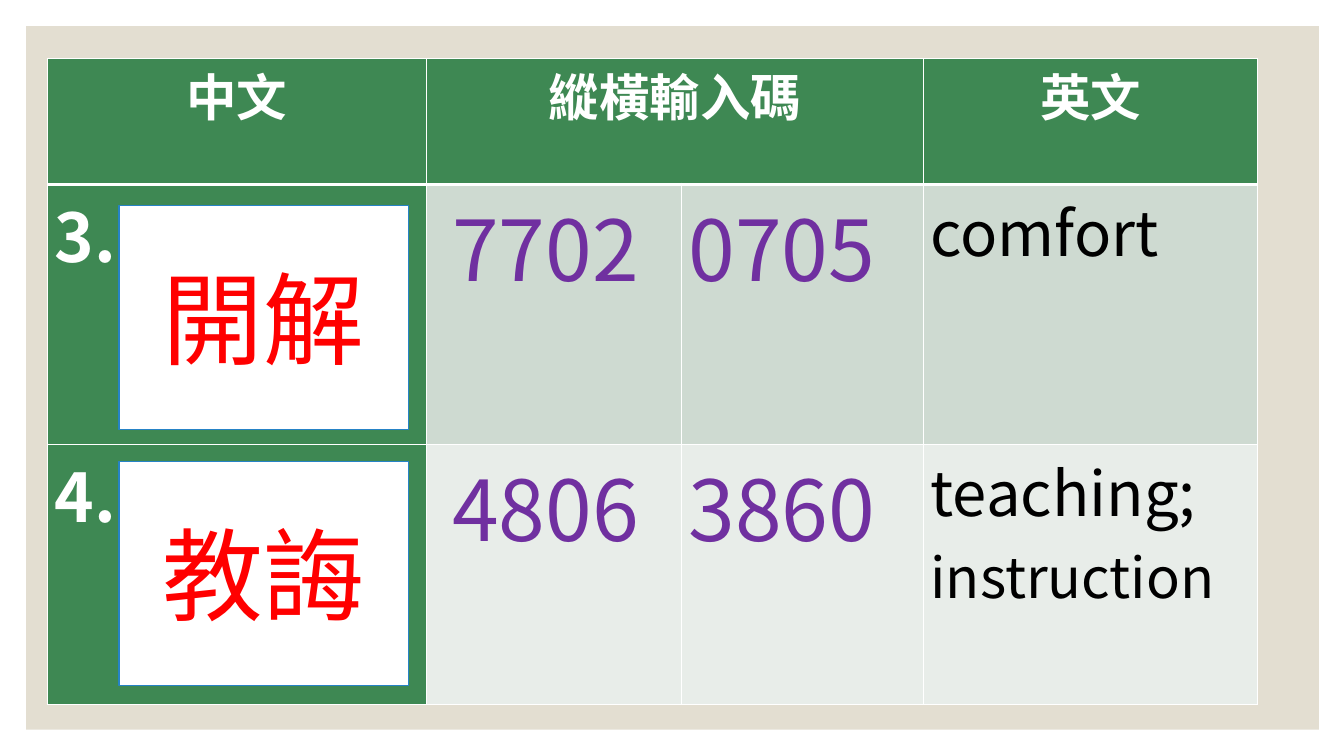
from lxml.etree import SubElement
from pptx import Presentation
from pptx.dml.color import RGBColor as RGB
from pptx.enum.shapes import MSO_SHAPE as Kind
from pptx.enum.text import MSO_ANCHOR as Anchor, PP_ALIGN as Align
from pptx.oxml.ns import qn
from pptx.util import Inches, Pt

FONT = "Noto Sans CJK SC"
WHITE = RGB(0xFF, 0xFF, 0xFF)
BLACK = RGB(0, 0, 0)
RED = RGB(0xFF, 0, 0)
PURPLE = RGB(0x70, 0x30, 0xA0)
GREEN = RGB(0x3E, 0x88, 0x53)
BLUE = RGB(0x26, 0x83, 0xC6)
SAND = RGB(0xE3, 0xDE, 0xD1)
BANDS = [RGB(0xCE, 0xDA, 0xD1), RGB(0xE8, 0xED, 0xE9)]

COLS = [3.76, 2.53, 2.4, 3.31]
ROWS = [1.25, 2.58, 2.58]
LEFT, TOP = 0.47, 0.58
HEADS = ["中文", "縱橫輸入碼", "", "英文"]
WORDS = [
    ("開解", ["3.", " 7702", "0705", "comfort"]),
    ("教誨", ["4.", " 4806", "3860", "teaching; "]),
]
STYLES = [(48, WHITE, True), (60, PURPLE, False),
          (60, PURPLE, False), (44, BLACK, False)]


def style(run, size, color, bold=False):
    """Set Latin and East Asian type alike."""
    font = run.font
    font.name, font.size, font.bold = FONT, Pt(size), bold
    font.color.rgb = color
    SubElement(font._element, qn("a:ea"), typeface=FONT)


def box(left, top, width, height, fill):
    shape = slide.shapes.add_shape(
        Kind.RECTANGLE, *map(Inches, (left, top, width, height)))
    shape.shadow.inherit = False
    shape.fill.solid()
    shape.fill.fore_color.rgb = fill
    shape.line.fill.background()
    return shape


deck = Presentation()
deck.slide_width, deck.slide_height = Inches(13.33), Inches(7.5)
slide = deck.slides.add_slide(deck.slide_layouts[6])
box(0.26, 0.26, 12.82, 6.98, SAND)

# Vocabulary table
table = slide.shapes.add_table(
    len(ROWS), len(COLS), Inches(LEFT), Inches(TOP),
    Inches(sum(COLS)), Inches(sum(ROWS))).table
for col, width in zip(table.columns, COLS):
    col.width = Inches(width)
for row, height in zip(table.rows, ROWS):
    row.height = Inches(height)
table.cell(0, 1).merge(table.cell(0, 2))

texts = [HEADS] + [cells for _, cells in WORDS]
for i, line in enumerate(texts):
    for j, text in enumerate(line):
        cell = table.cell(i, j)
        cell.margin_left = cell.margin_right = Inches(0.07)
        cell.margin_top = cell.margin_bottom = 0
        props = cell._tc.get_or_add_tcPr()
        for side in "LRTB":
            thick = (i, side) in ((0, "B"), (1, "T"))
            edge = SubElement(props, qn("a:ln" + side),
                              w=str(Pt(3 if thick else 1)))
            paint = SubElement(edge, qn("a:solidFill"))
            SubElement(paint, qn("a:srgbClr"), val=str(WHITE))
        cell.fill.solid()
        cell.fill.fore_color.rgb = GREEN if i == 0 or j == 0 else BANDS[i - 1]
        if text:
            para = cell.text_frame.paragraphs[0]
            para.text = text
            para.alignment = Align.LEFT if i else Align.CENTER
            style(para.runs[0], *(STYLES[j] if i else (36, WHITE, True)))

tail = table.cell(2, 3).text_frame.paragraphs[0].add_run()
tail.text = "instruction"
style(tail, 40, BLACK)

# Word cards over the first column
for i, (word, _) in enumerate(WORDS):
    card = box(1.18, 2.04 + i * 2.54, 2.87, 2.22, WHITE)
    card.line.color.rgb = BLUE
    card.line.width = Pt(1)
    frame = card.text_frame
    frame.text = word
    frame.vertical_anchor = Anchor.MIDDLE
    para = frame.paragraphs[0]
    para.alignment = Align.CENTER
    style(para.runs[0], 72, RED)

deck.save("out.pptx")
